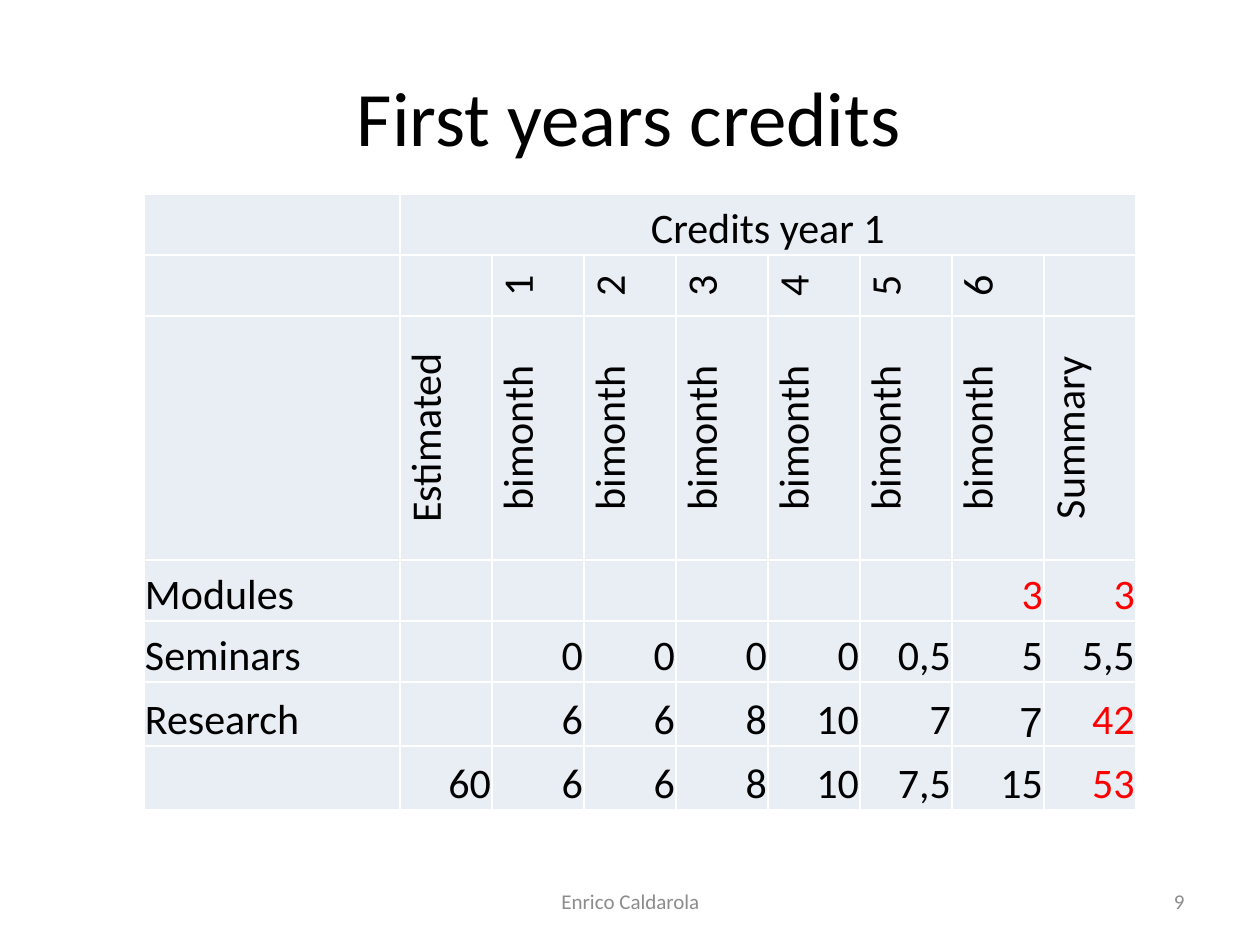
from lxml.etree import SubElement
from pptx import Presentation
from pptx.dml.color import RGBColor
from pptx.enum.text import MSO_ANCHOR, PP_ALIGN
from pptx.oxml.ns import qn
from pptx.util import Pt

TITLE = ("First years credits", (62, 37, 1134, 157))
FOOTERS = [
    ("Enrico Caldarola", (431, 876, 399, 50), PP_ALIGN.CENTER),
    ("9", (903, 876, 294, 50), PP_ALIGN.RIGHT),
]

PERIODS = ["1", "2", "3", "4", "5", "6"]
ROWS = [
    ["", "Credits year 1"] + [""] * 7,
    ["", "", *PERIODS, ""],
    ["", "Estimated", *["bimonth" for _ in PERIODS], "Summary"],
    ["Modules", "", "", "", "", "", "", "3", "3"],
    ["Seminars", "", "0", "0", "0", "0", "0,5", "5", "5,5"],
    ["Research", "", "6", "6", "8", "10", "7", "7", "42"],
    ["", "60", "6", "6", "8", "10", "7,5", "15", "53"],
]
RED_CELLS = {(3, 7), (3, 8), (5, 8), (6, 8)}
ARIAL_CELLS = {(5, 7)}
VERTICAL_ROWS = {1, 2}
HEADER_ROWS = 3

TABLE_LEFT, TABLE_TOP = 144, 194
COLUMN_WIDTHS = [256] + [92] * 8
ROW_HEIGHTS = [61, 61, 244, 61, 61, 64, 64]

BLACK, RED, GREY = "000000", "FF0000", "8C8C8C"
CELL_FILL, BORDER = "E9EDF4", "FFFFFF"


def px(length):
    return round(length * 914400 / 126)


def color(value):
    return RGBColor.from_string(value)


def write(text_frame, text, size, fill, alignment, font_name="Calibri"):
    paragraph = text_frame.paragraphs[0]
    paragraph.alignment = alignment
    run = paragraph.add_run()
    run.text = text
    run.font.size = Pt(size)
    run.font.name = font_name
    run.font.color.rgb = color(fill)


def place(shape, box):
    shape.left, shape.top, shape.width, shape.height = map(px, box)


def add_borders(cell):
    """Draw the four cell borders, which must precede the cell's fill."""
    properties = cell._tc.get_or_add_tcPr()
    for side in ("a:lnL", "a:lnR", "a:lnT", "a:lnB"):
        line = SubElement(properties, qn(side), w=str(Pt(1)))
        fill = SubElement(line, qn("a:solidFill"))
        SubElement(fill, qn("a:srgbClr"), val=BORDER)


def format_cell(cell, row, column, text):
    add_borders(cell)
    cell.fill.solid()
    cell.fill.fore_color.rgb = color(CELL_FILL)
    if not text:
        return
    cell.margin_left = cell.margin_right = cell.margin_top = px(1)
    cell.margin_bottom = 0
    cell.vertical_anchor = MSO_ANCHOR.BOTTOM
    if row in VERTICAL_ROWS:
        cell._tc.get_or_add_tcPr().set("vert", "vert270")
    if row < HEADER_ROWS:
        alignment = PP_ALIGN.CENTER
    else:
        alignment = PP_ALIGN.RIGHT if column else PP_ALIGN.LEFT
    fill = RED if (row, column) in RED_CELLS else BLACK
    font_name = "Arial" if (row, column) in ARIAL_CELLS else "Calibri"
    write(cell.text_frame, text, 24, fill, alignment, font_name)


def add_credits_table(slide):
    table = slide.shapes.add_table(
        len(ROWS), len(COLUMN_WIDTHS), px(TABLE_LEFT), px(TABLE_TOP),
        px(sum(COLUMN_WIDTHS)), px(sum(ROW_HEIGHTS))).table
    table.first_row = table.horz_banding = False
    for column, width in zip(table.columns, COLUMN_WIDTHS):
        column.width = px(width)
    for row, height in zip(table.rows, ROW_HEIGHTS):
        row.height = px(height)
    table.cell(0, 1).merge(table.cell(0, len(COLUMN_WIDTHS) - 1))
    for row, texts in enumerate(ROWS):
        for column, text in enumerate(texts):
            format_cell(table.cell(row, column), row, column, text)


def add_footer(slide, text, box, alignment):
    shape = slide.shapes.add_textbox(*map(px, box))
    shape.text_frame.word_wrap = True
    shape.text_frame.vertical_anchor = MSO_ANCHOR.MIDDLE
    write(shape.text_frame, text, 12, GREY, alignment)


def main():
    presentation = Presentation()
    presentation.slide_width, presentation.slide_height = px(1260), px(945)
    slide = presentation.slides.add_slide(presentation.slide_layouts[5])

    text, box = TITLE
    title = slide.shapes.title
    place(title, box)
    title.text_frame.vertical_anchor = MSO_ANCHOR.MIDDLE
    write(title.text_frame, text, 44, BLACK, PP_ALIGN.CENTER)

    add_credits_table(slide)
    for footer in FOOTERS:
        add_footer(slide, *footer)
    presentation.save("out.pptx")


if __name__ == "__main__":
    main()
